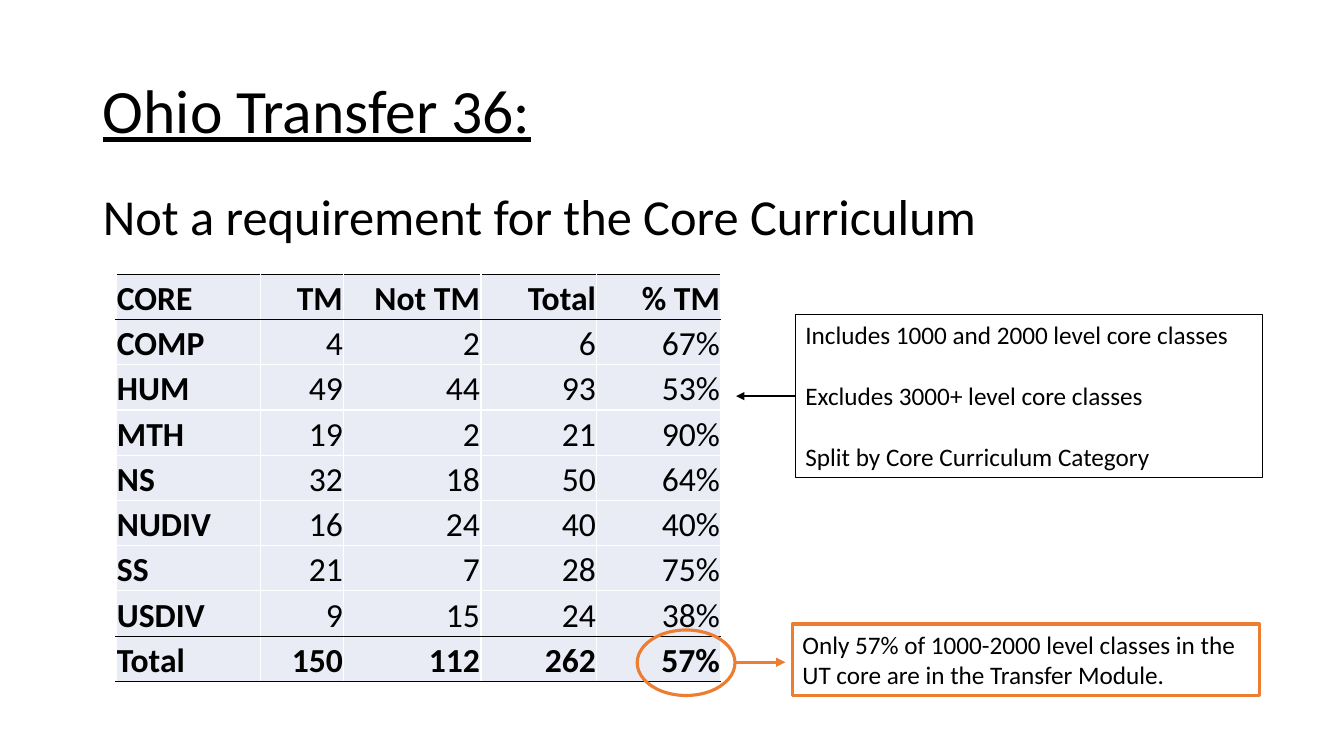
from lxml import etree
from pptx import Presentation
from pptx.dml.color import RGBColor
from pptx.enum.shapes import MSO_CONNECTOR, MSO_SHAPE
from pptx.enum.text import MSO_ANCHOR, MSO_AUTO_SIZE, PP_ALIGN
from pptx.oxml.ns import qn
from pptx.util import Inches, Pt

RECT, OVAL, STRAIGHT = MSO_SHAPE.RECTANGLE, MSO_SHAPE.OVAL, MSO_CONNECTOR.STRAIGHT
LEFT, RIGHT = PP_ALIGN.LEFT, PP_ALIGN.RIGHT
TOP, MIDDLE, BOTTOM = MSO_ANCHOR.TOP, MSO_ANCHOR.MIDDLE, MSO_ANCHOR.BOTTOM
NO_FIT = MSO_AUTO_SIZE.NONE
COLORS = {"black": "000000", "white": "FFFFFF", "cell": "E9EBF5", "orange": "ED7D31"}
RGB = {name: RGBColor.from_string(value) for name, value in COLORS.items()}


def style_text(p, size, align=LEFT, bold=False):
    p.alignment = align
    for r in p.runs:
        r.font.name = "Calibri"
        r.font.size = Pt(size)
        r.font.bold = bold
        r.font.color.rgb = RGB["black"]


def add_border(tc_pr, position, side, color):
    ln = etree.Element(qn(f"a:ln{side}"), w=str(Pt(1)))
    fill = etree.SubElement(ln, qn("a:solidFill"))
    etree.SubElement(fill, qn("a:srgbClr"), val=COLORS[color])
    tc_pr.insert(position, ln)


prs = Presentation()
prs.slide_width, prs.slide_height = Inches(13.33), Inches(7.5)
s = prs.slides.add_slide(prs.slide_layouts[1])

title, body = s.placeholders
headings = [
    (title, "Ohio Transfer 36:", 0.4, 1.45, 44, MIDDLE),
    (body, "Not a requirement for the Core Curriculum", 1.85, 4.76, 36, TOP),
]
for sp, text, top, height, size, anchor in headings:
    sp.left, sp.top = Inches(0.92), Inches(top)
    sp.width, sp.height = Inches(11.5), Inches(height)
    tf = sp.text_frame
    tf.text = text
    tf.auto_size = NO_FIT
    tf.vertical_anchor = anchor
    p = tf.paragraphs[0]
    p.line_spacing = 0.9
    style_text(p, size)
title.text_frame.paragraphs[0].runs[0].font.underline = True
p.space_before = Pt(10)
p_pr = p._p.get_or_add_pPr()
p_pr.set("marL", "0")
p_pr.set("indent", "0")
etree.SubElement(p_pr, qn("a:buNone"))

counts = [("COMP", 4, 2), ("HUM", 49, 44), ("MTH", 19, 2), ("NS", 32, 18),
          ("NUDIV", 16, 24), ("SS", 21, 7), ("USDIV", 9, 15)]
counts.append(("Total", sum(c[1] for c in counts), sum(c[2] for c in counts)))
rows = [("CORE", "TM", "Not TM", "Total", "% TM")]
for core, tm, not_tm in counts:
    total = tm + not_tm
    rows.append((core, tm, not_tm, total, f"{tm / total:.0%}"))

col_widths = [1.43, 0.83, 1.36, 1.15, 1.23]
last = len(rows) - 1
black_rules = {0, 1, last, last + 1}
table = s.shapes.add_table(len(rows), len(col_widths), Inches(1.15), Inches(2.72),
                           Inches(6), Inches(4.04)).table
for col, width in zip(table.columns, col_widths):
    col.width = Inches(width)
for i, row in enumerate(rows):
    table.rows[i].height = Inches(4.04 / len(rows))
    rule_above = "black" if i in black_rules else "white"
    rule_below = "black" if i + 1 in black_rules else "white"
    borders = [("L", "white"), ("R", "white"), ("T", rule_above), ("B", rule_below)]
    for j, value in enumerate(row):
        cell = table.cell(i, j)
        cell.text = str(value)
        cell.vertical_anchor = BOTTOM
        cell.margin_left = cell.margin_right = cell.margin_top = Inches(0.01)
        cell.margin_bottom = 0
        cell.fill.solid()
        cell.fill.fore_color.rgb = RGB["cell"]
        style_text(cell.text_frame.paragraphs[0], 24, RIGHT if j else LEFT,
                   j == 0 or i in (0, last))
        for position, (side, color) in enumerate(borders):
            add_border(cell._tc.get_or_add_tcPr(), position, side, color)

scope_lines = ["Includes 1000 and 2000 level core classes",
               "Excludes 3000+ level core classes",
               "Split by Core Curriculum Category"]
finding_lines = ["Only 57% of 1000-2000 level classes in the UT core are in the Transfer Module."]
outlines = [
    (RECT, 7.89, 3.12, 4.63, 1.62, "black", 1, scope_lines),
    (OVAL, 6.32, 6.25, 0.97, 0.65, "orange", 2.25, []),
    (RECT, 7.86, 6.19, 4.63, 0.71, "orange", 2.25, finding_lines),
]
drawn = []
for kind, left, top, width, height, color, weight, lines in outlines:
    sp = s.shapes.add_shape(kind, Inches(left), Inches(top), Inches(width), Inches(height))
    drawn.append(sp)
    sp.shadow.inherit = False
    sp.line.color.rgb = RGB[color]
    sp.line.width = Pt(weight)
    if not lines:
        sp.fill.background()
        continue
    sp.fill.solid()
    sp.fill.fore_color.rgb = RGB["white"]
    tf = sp.text_frame
    tf.word_wrap = True
    tf.vertical_anchor = TOP
    tf.text = "\n".join(lines)
    for n, p in enumerate(tf.paragraphs):
        style_text(p, 18)
        p.space_before = Pt(22 if n else 0)

scope_box = drawn[0]
arrows = [(7.89, 7.3, 3.93, "black", 1, scope_box), (7.3, 7.79, 6.57, "orange", 2.25, None)]
for start, end, y, color, weight, source in arrows:
    arrow = s.shapes.add_connector(STRAIGHT, Inches(start), Inches(y), Inches(end), Inches(y))
    if source is not None:
        arrow.begin_connect(source, 1)
    arrow.line.color.rgb = RGB[color]
    arrow.line.width = Pt(weight)
    etree.SubElement(arrow.line._get_or_add_ln(), qn("a:tailEnd"), type="triangle")
    etree.SubElement(arrow._element.spPr, qn("a:effectLst"))

prs.save("out.pptx")
